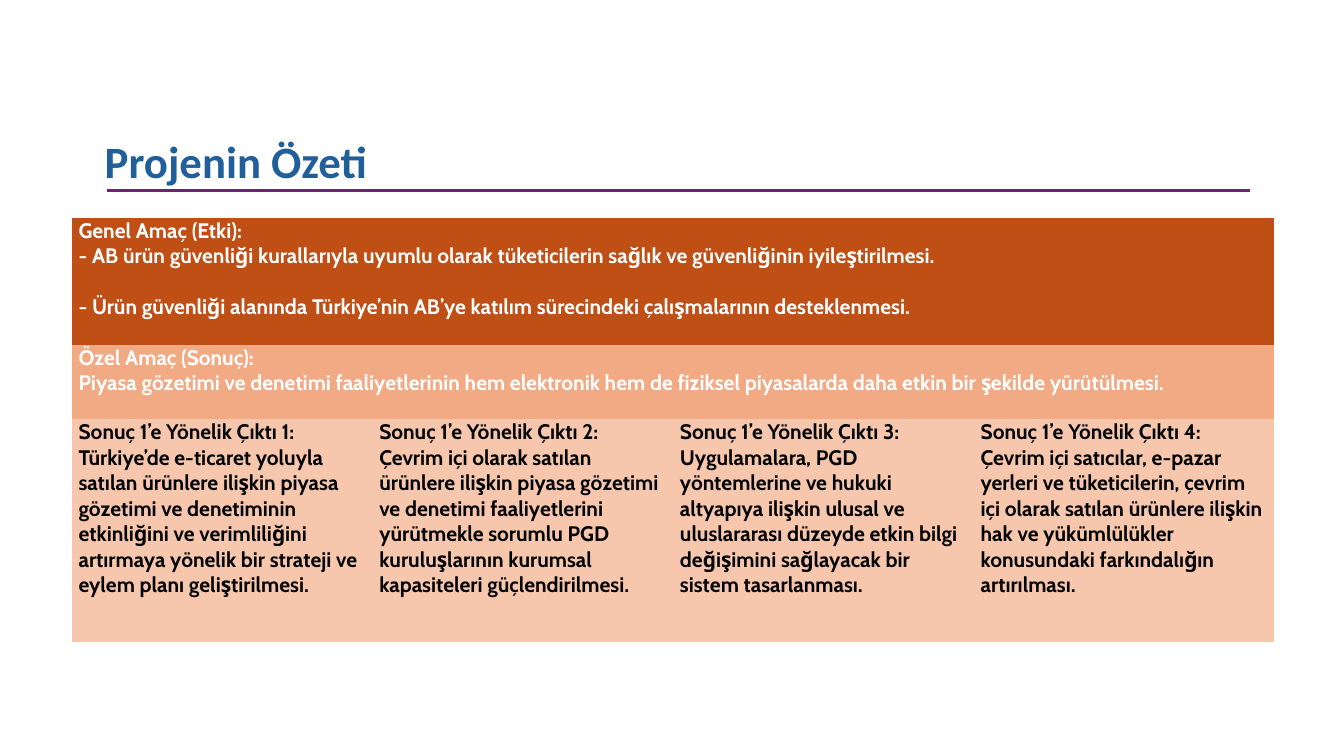
import pptx
import pptx.dml.color
import pptx.enum.shapes
import pptx.oxml.ns
import pptx.util
from lxml import etree

TITLE = "Projenin Özeti"
GOALS = [
    ("C04F15", [
        "Genel Amaç (Etki):",
        "- AB ürün güvenliği kurallarıyla uyumlu olarak tüketicilerin sağlık ve güvenliğinin iyileştirilmesi.",
        "- Ürün güvenliği alanında Türkiye’nin AB’ye katılım sürecindeki çalışmalarının desteklenmesi.",
    ]),
    ("F2AA84", [
        "Özel Amaç (Sonuç):",
        "Piyasa gözetimi ve denetimi faaliyetlerinin hem elektronik hem de fiziksel piyasalarda daha etkin bir şekilde yürütülmesi.",
    ]),
]
OUTPUTS = [
    "Türkiye’de e-ticaret yoluyla satılan ürünlere ilişkin piyasa gözetimi ve denetiminin etkinliğini ve verimliliğini artırmaya yönelik bir strateji ve eylem planı geliştirilmesi.",
    "Çevrim içi olarak satılan ürünlere ilişkin piyasa gözetimi ve denetimi faaliyetlerini yürütmekle sorumlu PGD kuruluşlarının kurumsal kapasiteleri güçlendirilmesi.",
    "Uygulamalara, PGD yöntemlerine ve hukuki altyapıya ilişkin ulusal ve uluslararası düzeyde etkin bilgi değişimini sağlayacak bir sistem tasarlanması.",
    "Çevrim içi satıcılar, e-pazar yerleri ve tüketicilerin, çevrim içi olarak satılan ürünlere ilişkin hak ve yükümlülükler konusundaki farkındalığın artırılması.",
]
COLORS = {"title": "215F9A", "rule": "78206E", "output": "F6C6AD", "light": "FFFFFF", "dark": "000000"}
ROW_HEIGHTS = [1.26, 0.74, 2.21]
TABLE_LEFT, TABLE_TOP, TABLE_WIDTH = 0.71, 2.16, 11.93
GOAL_GAP = 18
NO_GRID_STYLE = "{2D5ABB26-0587-4C30-8999-92F81FD0307C}"

inches = pptx.util.Inches


def rgb(value):
    return pptx.dml.color.RGBColor.from_string(value)


def format_font(font, name, size, color):
    font.name = name
    font.size = pptx.util.Pt(size)
    font.bold = True
    font.color.rgb = rgb(color)


def fill_cell(cell, lines, fill, color):
    cell.fill.solid()
    cell.fill.fore_color.rgb = rgb(fill)
    cell.margin_left = cell.margin_right = inches(0.07)
    cell.margin_top = cell.margin_bottom = 0
    cell.text_frame.text = "\n".join(lines)
    for index, paragraph in enumerate(cell.text_frame.paragraphs):
        if index == 2:
            paragraph.space_before = pptx.util.Pt(GOAL_GAP)
        format_font(paragraph.runs[0].font, "Cabin", 15, color)


def add_title(slide):
    box = slide.shapes.add_textbox(inches(0.94), inches(1.28), inches(9.96), inches(0.64))
    box.text_frame.word_wrap = True
    box.text_frame.text = TITLE
    format_font(box.text_frame.paragraphs[0].runs[0].font, "Calibri", 32, COLORS["title"])
    rule = slide.shapes.add_connector(
        pptx.enum.shapes.MSO_CONNECTOR.STRAIGHT, inches(1.06), inches(1.89), inches(12.4), inches(1.89))
    rule.line.color.rgb = rgb(COLORS["rule"])
    rule.line.width = pptx.util.Pt(1.5)
    etree.SubElement(rule._element.spPr, pptx.oxml.ns.qn("a:effectLst"))


def add_summary(slide):
    table = slide.shapes.add_table(
        len(ROW_HEIGHTS), len(OUTPUTS), inches(TABLE_LEFT), inches(TABLE_TOP),
        inches(TABLE_WIDTH), inches(sum(ROW_HEIGHTS))).table
    table._tbl.tblPr.find(pptx.oxml.ns.qn("a:tableStyleId")).text = NO_GRID_STYLE
    table.first_row = table.horz_banding = False
    for row, height in zip(table.rows, ROW_HEIGHTS):
        row.height = inches(height)
    for index, (fill, lines) in enumerate(GOALS):
        table.cell(index, 0).merge(table.cell(index, len(OUTPUTS) - 1))
        fill_cell(table.cell(index, 0), lines, fill, COLORS["light"])
    for index, output in enumerate(OUTPUTS):
        heading = f"Sonuç 1’e Yönelik Çıktı {index + 1}:"
        fill_cell(table.cell(len(GOALS), index), [heading, output], COLORS["output"], COLORS["dark"])


def main():
    presentation = pptx.Presentation()
    presentation.slide_width = inches(13.33)
    presentation.slide_height = inches(7.5)
    slide = presentation.slides.add_slide(presentation.slide_layouts[6])
    add_title(slide)
    add_summary(slide)
    presentation.save("out.pptx")


if __name__ == "__main__":
    main()
